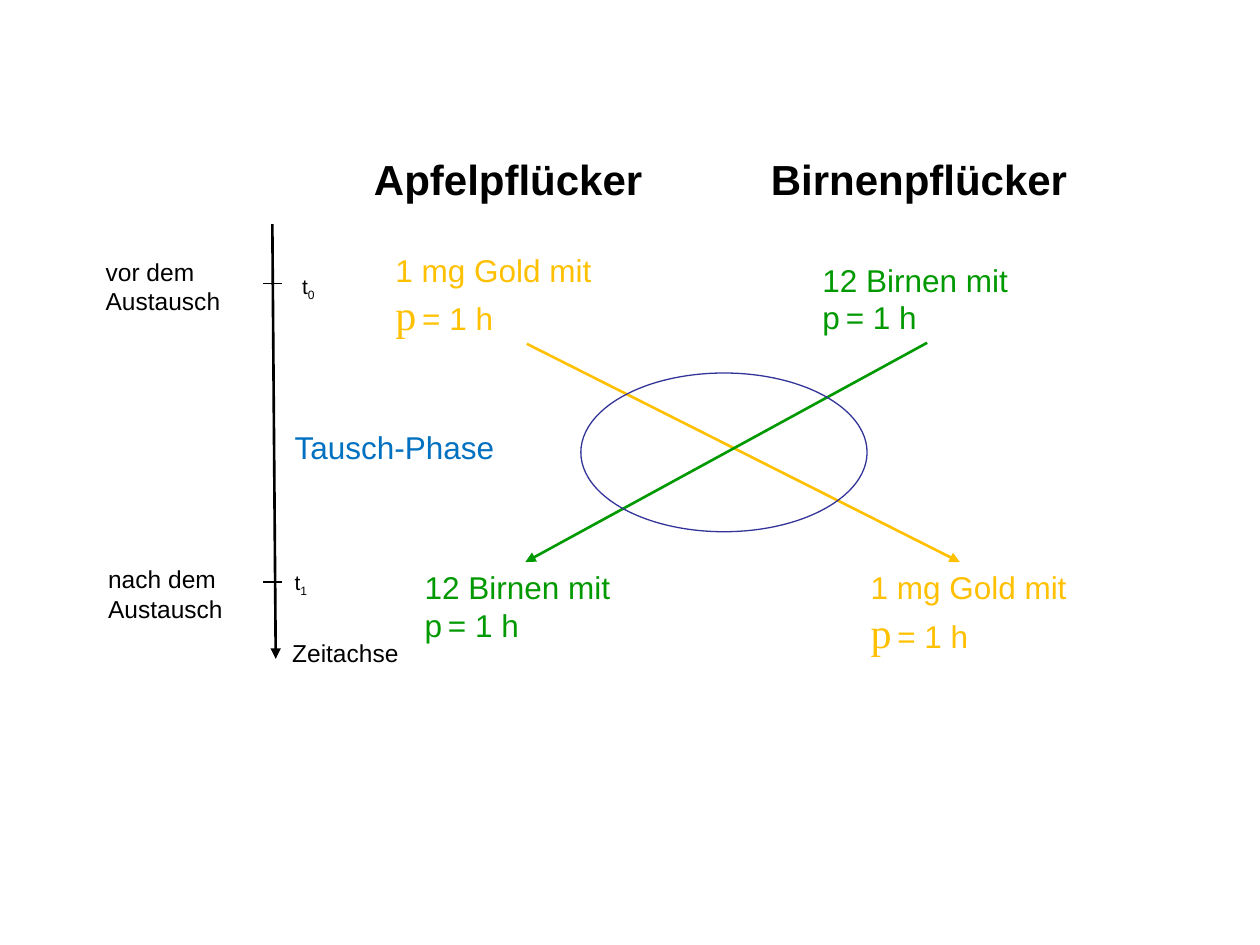
from dataclasses import dataclass

from lxml import etree
from pptx import Presentation
from pptx.dml.color import RGBColor
from pptx.enum.shapes import MSO_CONNECTOR, MSO_SHAPE
from pptx.enum.text import MSO_AUTO_SIZE
from pptx.oxml.ns import qn
from pptx.util import Cm, Pt

STRAIGHT = MSO_CONNECTOR.STRAIGHT
OVAL = MSO_SHAPE.OVAL
FIT_SHAPE = MSO_AUTO_SIZE.SHAPE_TO_FIT_TEXT

BLACK = RGBColor(0x00, 0x00, 0x00)
GOLD = RGBColor(0xFF, 0xC0, 0x00)
GREEN = RGBColor(0x00, 0x99, 0x00)
BLUE = RGBColor(0x00, 0x70, 0xC0)
INDIGO = RGBColor(0x33, 0x33, 0x99)

SANS = "Arial"
SERIF = "Times New Roman"


@dataclass(frozen=True)
class Span:
    text: str
    size: float | None = None
    font: str = SANS
    subscript: bool = False


@dataclass(frozen=True)
class Label:
    paragraphs: tuple[tuple[Span, ...], ...]
    left: float
    top: float
    width: float
    height: float
    size: float = 14
    color: RGBColor = BLACK
    bold: bool = False
    wrap: bool = False


@dataclass(frozen=True)
class Line:
    start: tuple[float, float]
    end: tuple[float, float]
    color: RGBColor = BLACK
    weight: float = 1.5
    arrow: bool = True


def plain(text: str) -> tuple[tuple[Span, ...], ...]:
    return ((Span(text),),)


def instant(index: str) -> tuple[tuple[Span, ...], ...]:
    return ((Span("t"), Span(index, subscript=True)),)


PRICE_END = (Span(" ", size=12), Span("= 1 h"))
GOLD_OFFER = (
    (Span("1 mg Gold mit"),),
    (Span("p", size=24, font=SERIF), *PRICE_END),
)
PEAR_OFFER = ((Span("12 Birnen mit\np"), *PRICE_END),)

T0, T1 = 5.72, 11.73
OFFER_END = 11.33

LINES = [
    Line((5.49, 4.52), (5.56, 13.28)),
    Line((10.62, 6.93), (19.35, OFFER_END), GOLD),
    Line((18.69, 6.91), (10.59, OFFER_END), GREEN),
    *(Line((5.31, y), (5.69, y), weight=0.75, arrow=False) for y in (T0, T1)),
]

LABELS = [
    Label(plain("Apfelpflücker"), 7.29, 2.97, 5.97, 1.27, size=24, bold=True),
    Label(plain("Birnenpflücker"), 15.29, 2.97, 6.55, 1.27, size=24, bold=True),
    Label(plain("vor dem\nAustausch"), 1.88, 5.05, 2.84, 1.45),
    Label(plain("nach dem\nAustausch"), 1.93, 11.25, 2.84, 1.45),
    Label(plain("Zeitachse"), 5.64, 12.73, 2.67, 0.86),
    Label(instant("0"), 5.84, 5.38, 0.79, 0.76, size=12),
    Label(instant("1"), 5.69, 11.35, 0.79, 0.76, size=12),
    Label(plain("Tausch-Phase"), 5.69, 8.51, 4.6, 1.02, size=18, color=BLUE),
    Label(GOLD_OFFER, 7.72, 4.93, 4.98, 2.06, size=18, color=GOLD, wrap=True),
    Label(GOLD_OFFER, 17.3, OFFER_END, 5.21, 2.06, size=18, color=GOLD, wrap=True),
    Label(PEAR_OFFER, 16.33, 5.13, 5.03, 1.8, size=18, color=GREEN, wrap=True),
    Label(PEAR_OFFER, 8.31, OFFER_END, 5.03, 1.8, size=18, color=GREEN, wrap=True),
]


def add_span(paragraph, span: Span, *, size: float, color: RGBColor, bold: bool) -> None:
    for number, text in enumerate(span.text.split("\n")):
        if number:
            paragraph.add_line_break()
        run = paragraph.add_run()
        run.text = text
        run.font.name = span.font
        run.font.size = Pt(span.size or size)
        run.font.bold = bold
        run.font.color.rgb = color
        if span.subscript:
            run._r.get_or_add_rPr().set("baseline", "-25000")


def write_text(frame, paragraphs: tuple[tuple[Span, ...], ...], *,
               size: float, color: RGBColor, bold: bool, wrap: bool) -> None:
    frame.word_wrap = wrap
    frame.auto_size = FIT_SHAPE
    for number, spans in enumerate(paragraphs):
        paragraph = frame.add_paragraph() if number else frame.paragraphs[0]
        for span in spans:
            add_span(paragraph, span, size=size, color=color, bold=bold)


def draw_label(slide, label: Label) -> None:
    box = slide.shapes.add_textbox(
        Cm(label.left), Cm(label.top), Cm(label.width), Cm(label.height))
    write_text(box.text_frame, label.paragraphs, size=label.size,
               color=label.color, bold=label.bold, wrap=label.wrap)


def draw_line(slide, line: Line) -> None:
    connector = slide.shapes.add_connector(
        STRAIGHT, *(Cm(value) for value in line.start + line.end))
    connector.line.color.rgb = line.color
    connector.line.width = Pt(line.weight)
    if line.arrow:
        etree.SubElement(connector.line._get_or_add_ln(), qn("a:tailEnd"), type="triangle")
    etree.SubElement(connector._element.spPr, qn("a:effectLst"))


def draw_exchange_zone(slide) -> None:
    zone = slide.shapes.add_shape(OVAL, Cm(11.71), Cm(7.52), Cm(5.77), Cm(3.2))
    zone.shadow.inherit = False
    zone.fill.background()
    zone.line.color.rgb = INDIGO
    zone.line.width = Pt(0.75)


def main() -> None:
    presentation = Presentation()
    presentation.slide_width = Cm(25.4)
    presentation.slide_height = Cm(19.05)
    slide = presentation.slides.add_slide(presentation.slide_layouts[6])
    for line in LINES:
        draw_line(slide, line)
    draw_exchange_zone(slide)
    for label in LABELS:
        draw_label(slide, label)
    presentation.save("out.pptx")


if __name__ == "__main__":
    main()
